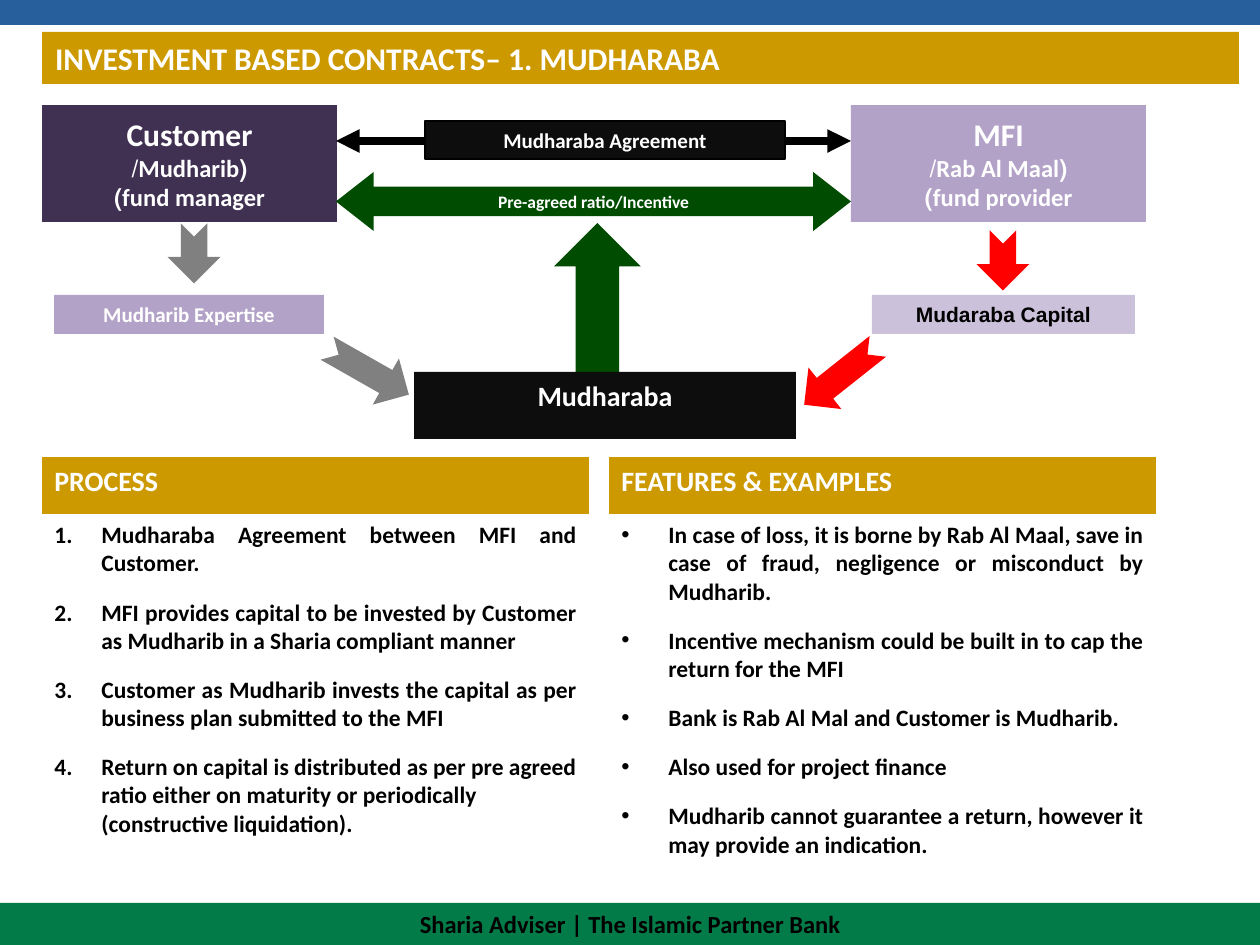
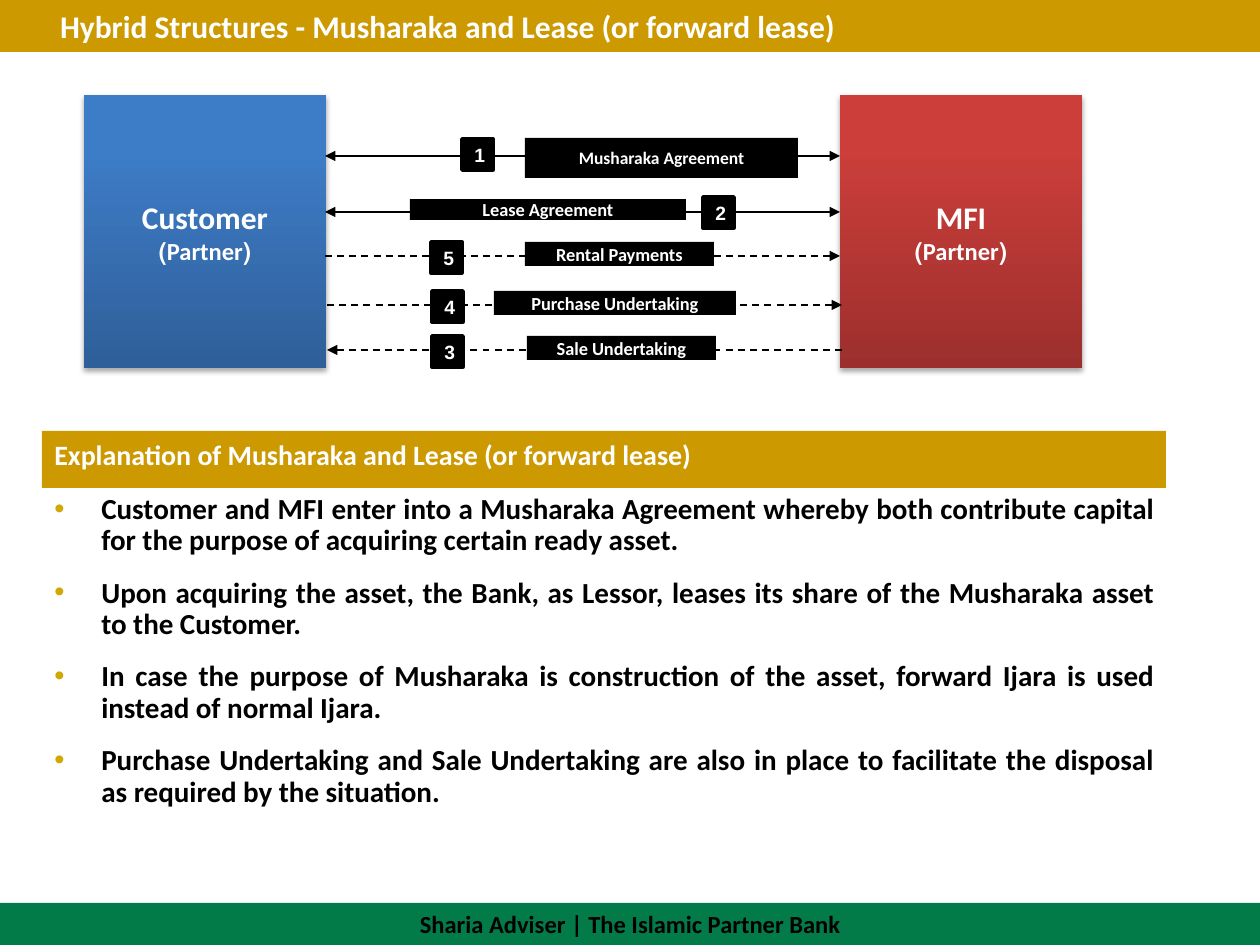
from lxml import etree
from pptx import Presentation
from pptx import util as u
from pptx.dml.color import RGBColor
from pptx.enum import dml, text
from pptx.enum import shapes as kinds
from pptx.oxml.ns import qn

COLORS = {
    "blue band": "275F9D", "green band": "027B49", "gold": "CC9900",
    "bullet gold": "D0A800", "white": "FFFFFF", "black": "000000",
    "ink": "0D0D0D", "plum": "403152", "lilac": "B3A2C7",
    "pale lilac": "CCC1DA", "dark green": "004C00", "gray": "808080",
    "red": "FF0000", "blue low": "2F5F99", "blue high": "3D7CC7",
    "red low": "9C2F2D", "red high": "CB3E3A",
}
FONT = "Calibri"
FOOTER = "Sharia Adviser | The Islamic Partner Bank"
WIDTH, HEIGHT = 1260, 945
FOOTER_TOP = 903
INDENT = 47
HEADING_HEIGHT = 57
BADGE = 31
RECT = kinds.MSO_SHAPE.RECTANGLE
NOTCHED = kinds.MSO_SHAPE.NOTCHED_RIGHT_ARROW
CENTER, LEFT, JUSTIFY = (text.PP_ALIGN.CENTER, text.PP_ALIGN.LEFT,
                         text.PP_ALIGN.JUSTIFY)
TOP, MIDDLE = text.MSO_ANCHOR.TOP, text.MSO_ANCHOR.MIDDLE


def px(*lengths):
    """Turn px (126 to the inch) into EMU."""
    return [round(length * 914400 / 126) for length in lengths]


def rgb(name):
    return RGBColor.from_string(COLORS[name])


def add_xml(parent, tag, **attributes):
    return etree.SubElement(parent, qn(tag), attributes)


def style(paragraph, size, color, align=CENTER, font=FONT):
    paragraph.alignment = align
    paragraph.font.size = u.Pt(size)
    paragraph.font.name = font
    paragraph.font.bold = True
    paragraph.font.color.rgb = rgb(color)


def add_box(shapes, box, fill, kind=RECT, rotation=0):
    shape = shapes.add_shape(kind, *px(*box))
    shape.shadow.inherit = False
    shape.fill.solid()
    shape.fill.fore_color.rgb = rgb(fill)
    shape.line.fill.background()
    shape.rotation = rotation
    return shape


def write(shape, words, size, color="white", align=CENTER, anchor=MIDDLE,
          font=FONT):
    """Put one line of text into a shape."""
    frame = shape.text_frame
    frame.word_wrap = True
    frame.auto_size = text.MSO_AUTO_SIZE.NONE
    frame.vertical_anchor = anchor
    if anchor == MIDDLE:
        frame.margin_top = frame.margin_bottom = 0
    frame.text = words
    style(frame.paragraphs[0], size, color, align, font)


def add_party(shapes, box, fill, name, roles):
    """Add a contract party: its name over its role, in right-to-left lines."""
    shape = add_box(shapes, box, fill)
    write(shape, name, 18)
    for role in roles:
        paragraph = shape.text_frame.add_paragraph()
        paragraph.text = role
        style(paragraph, 14, "white")
    for paragraph in shape.text_frame.paragraphs:
        paragraph._p.get_or_add_pPr().set("rtl", "1")
    return shape


def shade(shape, low, high):
    """Give a shape an upward gradient and a soft shadow."""
    shape.fill.gradient()
    shape.fill.gradient_angle = 90
    for stop, color, position in zip(shape.fill.gradient_stops, (low, high),
                                     (0, 0.8)):
        stop.color.rgb = rgb(color)
        stop.position = position
    effects = shape.element.spPr.find(qn("a:effectLst"))
    shadow = add_xml(effects, "a:outerShdw", blurRad="39400", dist="22900",
                     dir="5400000", rotWithShape="0")
    black = add_xml(shadow, "a:srgbClr", val=COLORS["black"])
    add_xml(black, "a:alpha", val="35000")


def add_line(shapes, start, end, y, width, heads, dashed=False):
    """Add a level line; heads names its arrowhead ends, headEnd or tailEnd."""
    connector = shapes.add_connector(kinds.MSO_CONNECTOR.STRAIGHT,
                                     *px(start, y, end, y))
    connector.line.color.rgb = rgb("black")
    connector.line.width = u.Pt(width)
    if dashed:
        connector.line.dash_style = dml.MSO_LINE.DASH
    line = connector.line._get_or_add_ln()
    for head in heads:
        add_xml(line, f"a:{head}", type="triangle")
    add_xml(connector.element.spPr, "a:effectLst")


def add_flow(shapes, start, y, heads, dashed, number, badge, label, words,
             size):
    """Add a numbered arrow between the parties, with its label."""
    group = shapes.add_group_shape().shapes
    add_line(group, start, start + 515, y, 1, heads, dashed)
    write(add_box(group, label, "black"), words, size)
    square = add_box(group, (*badge, BADGE, BADGE), "black")
    square.line.color.rgb = rgb("black")
    square.line.width = u.Pt(2)
    write(square, number, 11, font="Arial")


def add_heading(shapes, left, top, width, words):
    heading = add_box(shapes, (left, top, width, HEADING_HEIGHT), "gold")
    write(heading, words, 16, align=LEFT, anchor=TOP)


def add_list(shapes, box, items, size, numbered=False, bullet_color="black",
             spacing=1.0, last_align=JUSTIFY):
    frame = shapes.add_textbox(*px(*box)).text_frame
    frame.word_wrap = True
    indent = px(INDENT)[0]
    for index, item in enumerate(items):
        paragraph = frame.add_paragraph() if index else frame.paragraphs[0]
        paragraph.text = item
        properties = paragraph._p.get_or_add_pPr()
        properties.set("marL", str(indent))
        properties.set("indent", str(-indent))
        color = add_xml(properties, "a:buClr")
        add_xml(color, "a:srgbClr", val=COLORS[bullet_color])
        if numbered:
            add_xml(properties, "a:buFont", typeface=FONT)
            add_xml(properties, "a:buAutoNum", type="arabicPeriod")
        else:
            add_xml(properties, "a:buFont", typeface="Arial")
            add_xml(properties, "a:buChar", char="•")
        paragraph.line_spacing = spacing
        if index:
            paragraph.space_before = u.Pt(12)
        last = index == len(items) - 1
        style(paragraph, size, "black", last_align if last else JUSTIFY)


def add_panel(shapes, left, top, width, heading, items, size, **options):
    """Add a gold heading with a list under it."""
    add_list(shapes, (left, top + HEADING_HEIGHT, width, 348), items, size,
             **options)
    add_heading(shapes, left, top, width, heading)


def add_slide(presentation, title, box, margin):
    slide = presentation.slides.add_slide(presentation.slide_layouts[5])
    shape = slide.shapes.title
    shape.left, shape.top, shape.width, shape.height = px(*box)
    shape.fill.solid()
    shape.fill.fore_color.rgb = rgb("gold")
    write(shape, title, 18, align=LEFT)
    shape.text_frame.margin_left = px(margin)[0]
    footer = slide.shapes.add_textbox(*px(347, FOOTER_TOP, 567, 38))
    write(footer, FOOTER, 14, "black", anchor=TOP)
    return slide


def add_bands(slide):
    """Draw the top and bottom bands and move them to the slide's layout."""
    tree = slide.slide_layout.shapes.element
    for box, color in (((0, 0, WIDTH, 25), "blue band"),
                       ((0, FOOTER_TOP, WIDTH, HEIGHT - FOOTER_TOP),
                        "green band")):
        tree.insert(2, add_box(slide.shapes, box, color).element)


def build_mudharaba(presentation):
    slide = add_slide(presentation, "INVESTMENT BASED CONTRACTS– 1. MUDHARABA",
                      (42, 32, 1197, 52), 13)
    add_bands(slide)
    shapes = slide.shapes
    add_box(shapes, (554, 223, 87, 155), "dark green",
            kinds.MSO_SHAPE.UP_ARROW)
    add_panel(shapes, 42, 457, 547, "PROCESS", [
        "Mudharaba Agreement between MFI and Customer.",
        "MFI provides capital to be invested by Customer as Mudharib in a "
        "Sharia compliant manner",
        "Customer as Mudharib invests the capital as per business plan "
        "submitted to the MFI",
        "Return on capital is distributed as per pre agreed ratio either on "
        "maturity or periodically (constructive liquidation).",
    ], 13.4, numbered=True, last_align=LEFT)
    add_panel(shapes, 609, 457, 547, "FEATURES & EXAMPLES", [
        "In case of loss, it is borne by Rab Al Maal, save in case of fraud, "
        "negligence or misconduct by Mudharib.",
        "Incentive mechanism could be built in to cap the return for the MFI",
        "Bank is Rab Al Mal and Customer is Mudharib.",
        "Also used for project finance",
        "Mudharib cannot guarantee a return, however it may provide an "
        "indication.",
    ], 13.4)

    write(add_box(shapes, (414, 372, 382, 67), "ink"), "Mudharaba", 16,
          anchor=TOP)
    write(add_box(shapes, (54, 295, 270, 39), "lilac"),
          "Mudharib Expertise", 12)
    write(add_box(shapes, (872, 295, 263, 39), "pale lilac"),
          "Mudaraba Capital", 12, "black", font="Arial")
    add_party(shapes, (42, 105, 295, 117), "plum", "Customer",
              ["(Mudharib/", "fund manager)"])
    add_line(shapes, 336, 851, 141, 4.5, ("headEnd", "tailEnd"))
    add_party(shapes, (851, 105, 295, 117), "lilac", "MFI",
              ["(Rab Al Maal/", "fund provider)"])
    agreement = add_box(shapes, (425, 121, 360, 38), "ink")
    agreement.line.color.rgb = rgb("black")
    agreement.line.width = u.Pt(1)
    write(agreement, "Mudharaba Agreement", 12)

    for box, color, rotation in (((794, 349, 94, 53), "red", 141.6),
                                 ((321, 345, 94, 53), "gray", 29.6),
                                 ((164, 227, 60, 53), "gray", 90),
                                 ((973, 234, 60, 53), "red", 90)):
        add_box(shapes, box, color, NOTCHED, rotation)
    incentive = add_box(shapes, (336, 172, 515, 59), "dark green",
                        kinds.MSO_SHAPE.LEFT_RIGHT_ARROW)
    incentive.adjustments[0], incentive.adjustments[1] = 0.5, 0.64
    write(incentive, "Pre-agreed ratio/Incentive", 10)


def build_musharaka(presentation):
    slide = add_slide(
        presentation,
        "Hybrid Structures - Musharaka and Lease (or forward lease)",
        (0, 0, WIDTH, 52), 60)
    shapes = slide.shapes
    for left, name, color in ((84, "Customer", "blue"), (840, "MFI", "red")):
        party = add_party(shapes, (left, 95, 242, 273), "white", name,
                          ["(Partner)"])
        shade(party, f"{color} low", f"{color} high")

    both, right, left = ("headEnd", "tailEnd"), ("tailEnd",), ("headEnd",)
    flows = [
        (325, 212, both, False, "2", (703, 197), (410, 199, 276, 21),
         "Lease Agreement", 10.5),
        (325, 156, both, False, "1", (462, 139), (525, 138, 273, 40),
         "Musharaka Agreement", 10),
        (325, 256, right, True, "5", (431, 242), (525, 242, 189, 24),
         "Rental Payments", 10.5),
        (327, 305, right, True, "4", (432, 291), (494, 291, 242, 24),
         "Purchase Undertaking", 10.5),
        (327, 350, left, True, "3", (432, 336), (527, 336, 189, 24),
         "Sale Undertaking", 10.5),
    ]
    for flow in flows:
        add_flow(shapes, *flow)

    add_panel(
        shapes, 42, 431, 1124,
        "Explanation of Musharaka and Lease (or forward lease)", [
            "Customer and MFI enter into a Musharaka Agreement whereby both "
            "contribute capital for the purpose of acquiring certain ready "
            "asset.",
            "Upon acquiring the asset, the Bank, as Lessor, leases its share "
            "of the Musharaka asset to the Customer.",
            "In case the purpose of Musharaka is construction of the asset, "
            "forward Ijara is used instead of normal Ijara.",
            "Purchase Undertaking and Sale Undertaking are also in place to "
            "facilitate the disposal as required by the situation.",
        ], 16.6, bullet_color="bullet gold", spacing=0.9)


def main():
    presentation = Presentation()
    presentation.slide_width, presentation.slide_height = px(WIDTH, HEIGHT)
    build_mudharaba(presentation)
    build_musharaka(presentation)
    presentation.save("out.pptx")


if __name__ == "__main__":
    main()
